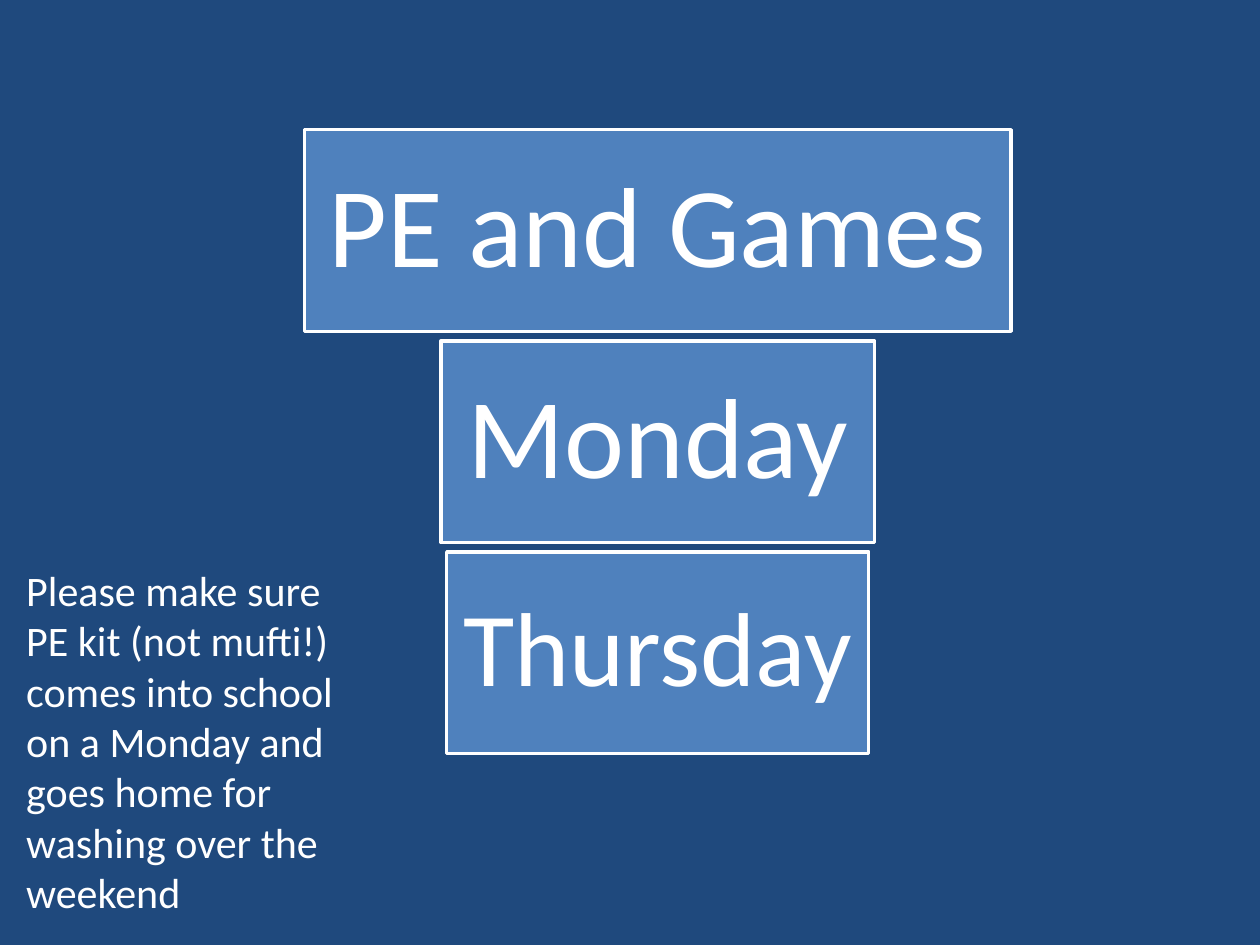
from dataclasses import dataclass

from pptx import Presentation
from pptx.dml.color import RGBColor
from pptx.enum.shapes import MSO_SHAPE as Shape
from pptx.enum.text import MSO_ANCHOR as Anchor, PP_ALIGN as Align
from pptx.util import Inches, Pt


@dataclass(frozen=True)
class Theme:
    background: RGBColor = RGBColor(0x1F, 0x49, 0x7D)
    block: RGBColor = RGBColor(0x4F, 0x81, 0xBD)
    light: RGBColor = RGBColor(0xFF, 0xFF, 0xFF)
    font: str = "Calibri"
    block_size: int = 65
    small_block_size: int = 60
    reminder_size: int = 24


THEME = Theme()

# Stack of centred blocks: label, width, type size
BLOCKS = [
    ("PE and Games", 5.61, THEME.block_size),
    ("Monday", 3.44, THEME.block_size),
    ("Thursday", 3.35, THEME.small_block_size),
]
STACK_CENTRE, STACK_TOP = 5.22, 1.03
BLOCK_HEIGHT, BLOCK_STEP = 1.6, 1.675

REMINDER = ("Please make sure PE kit (not mufti!) comes into school on a Monday "
            "and goes home for washing over the weekend")


def add_words(paragraph, words, size):
    run = paragraph.add_run()
    run.text = words
    run.font.name = THEME.font
    run.font.size = Pt(size)
    run.font.color.rgb = THEME.light


def add_block(slide, label, top, width, size):
    block = slide.shapes.add_shape(
        Shape.RECTANGLE, Inches(STACK_CENTRE - width / 2), Inches(top),
        Inches(width), Inches(BLOCK_HEIGHT))
    block.shadow.inherit = False
    block.fill.solid()
    block.fill.fore_color.rgb = THEME.block
    block.line.color.rgb = THEME.light
    block.line.width = Pt(2)

    frame = block.text_frame
    frame.word_wrap = True
    frame.vertical_anchor = Anchor.MIDDLE
    heading = frame.paragraphs[0]
    heading.alignment = Align.CENTER
    heading.line_spacing = 0.9
    heading.space_before = Pt(27)
    add_words(heading, label, size)


def add_reminder(slide):
    reminder = slide.shapes.add_textbox(
        Inches(0.11), Inches(4.43), Inches(2.82), Inches(2.93))
    reminder.text_frame.word_wrap = True
    add_words(reminder.text_frame.paragraphs[0], REMINDER, THEME.reminder_size)


def main():
    deck = Presentation()
    deck.slide_width, deck.slide_height = Inches(10), Inches(7.5)
    slide = deck.slides.add_slide(deck.slide_layouts[6])
    slide.background.fill.solid()
    slide.background.fill.fore_color.rgb = THEME.background

    # Subject and its days
    for row, (label, width, size) in enumerate(BLOCKS):
        add_block(slide, label, STACK_TOP + row * BLOCK_STEP, width, size)

    # Kit reminder
    add_reminder(slide)

    deck.save("out.pptx")


if __name__ == "__main__":
    main()
